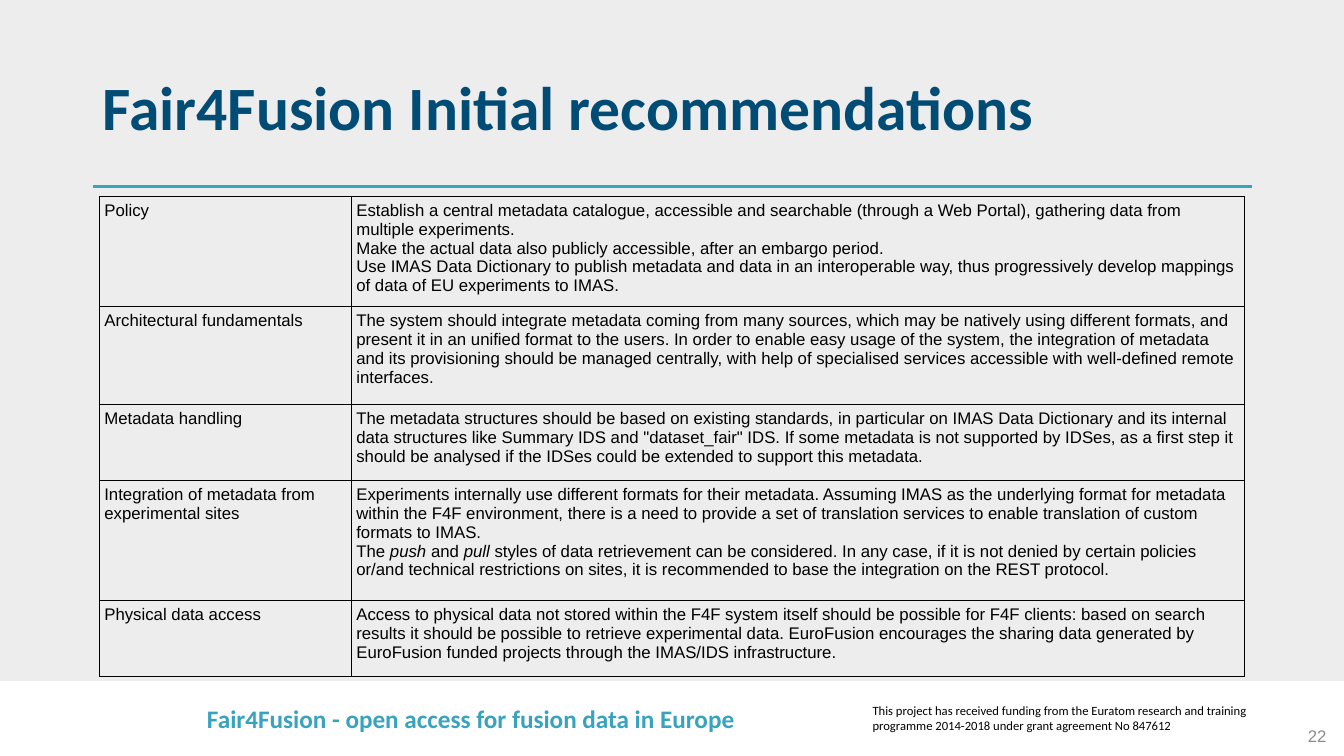
import pptx
import pptx.dml.color
import pptx.enum.shapes
import pptx.enum.text
import pptx.oxml.ns
import pptx.util
from lxml import etree
from pptx.util import Cm, Pt

HUES = {"back": "EEEDED", "white": "FFFFFF", "black": "000000",
        "teal": "37A3BF", "navy": "014C74", "gray": "8C8C8C"}
ALIGN = pptx.enum.text.PP_ALIGN
ANCHOR = pptx.enum.text.MSO_ANCHOR
qn = pptx.oxml.ns.qn


def hue(name):
    return pptx.dml.color.RGBColor.from_string(HUES[name])


def style(para, size, face, color, bold=False):
    for run in para.runs:
        run.font.size = Pt(size)
        run.font.name = face
        run.font.bold = bold
        run.font.color.rgb = hue(color)


deck = pptx.Presentation()
deck.slide_width, deck.slide_height = Cm(33.87), Cm(19.05)
slide = deck.slides.add_slide(deck.slide_layouts[6])
slide.background.fill.solid()
slide.background.fill.fore_color.rgb = hue("back")

# Footer band and title rule
band = slide.shapes.add_shape(pptx.enum.shapes.MSO_SHAPE.RECTANGLE,
                              0, Cm(17.17), Cm(33.87), Cm(1.88))
band.shadow.inherit = False
band.fill.solid()
band.fill.fore_color.rgb = hue("white")
band.line.color.rgb = hue("white")
band.line.width = Pt(1)

rule = slide.shapes.add_connector(pptx.enum.shapes.MSO_CONNECTOR.STRAIGHT,
                                  Cm(2.34), Cm(4.7), Cm(31.55), Cm(4.7))
rule.line.color.rgb = hue("teal")
rule.line.width = Pt(2.5)
etree.SubElement(rule._element.spPr, qn("a:effectLst"))

# Text, place, alignment, anchor, then size, font, colour, bold
labels = [
    ("This project has received funding from the Euratom research and training "
     "programme 2014-2018 under grant agreement No 847612",
     (21.74, 17.58, 10.36, 1.02), ALIGN.LEFT, ANCHOR.TOP,
     (9, "Calibri", "black")),
    ("Fair4Fusion - open access for fusion data in Europe",
     (4.39, 17.6, 14.96, 1.02), ALIGN.CENTER, ANCHOR.TOP,
     (18, "Calibri", "teal", True)),
    ("Fair4Fusion Initial recommendations",
     (2.34, 0.94, 29.21, 3.68), ALIGN.LEFT, ANCHOR.MIDDLE,
     (44, "Calibri", "navy", True)),
    ("22", (26.06, 18.03, 7.62, 1.02), ALIGN.RIGHT, ANCHOR.MIDDLE,
     (12, "Arial", "gray")),
]
for text, place, align, anchor, look in labels:
    frame = slide.shapes.add_textbox(*map(Cm, place)).text_frame
    frame.word_wrap = True
    frame.vertical_anchor = anchor
    frame.text = text
    para = frame.paragraphs[0]
    para.alignment = align
    if look[0] == 44:
        para.line_spacing = 0.9
    style(para, *look)

# Recommendations: height, topic, advice (asterisks enclose italics)
rows = [
    (2.75, "Policy", [
        "Establish a central metadata catalogue, accessible and searchable "
        "(through a Web Portal), gathering data from multiple experiments.",
        "Make the actual data also publicly accessible, after an embargo period.",
        "Use IMAS Data Dictionary to publish metadata and data in an interoperable "
        "way, thus progressively develop mappings of data of EU experiments to IMAS."]),
    (2.47, "Architectural fundamentals", [
        "The system should integrate metadata coming from many sources, which may "
        "be natively using different formats, and present it in an unified format "
        "to the users. In order to enable easy usage of the system, the integration "
        "of metadata and its provisioning should be managed centrally, with help of "
        "specialised services accessible with well-defined remote interfaces."]),
    (1.91, "Metadata handling", [
        "The metadata structures should be based on existing standards, in "
        "particular on IMAS Data Dictionary and its internal data structures like "
        "Summary IDS and \"dataset_fair\" IDS. If some metadata is not supported by "
        "IDSes, as a first step it should be analysed if the IDSes could be "
        "extended to support this metadata."]),
    (3.03, "Integration of metadata from experimental sites", [
        "Experiments internally use different formats for their metadata. Assuming "
        "IMAS as the underlying format for metadata within the F4F environment, "
        "there is a need to provide a set of translation services to enable "
        "translation of custom formats to IMAS.",
        "The *push* and *pull* styles of data retrievement can be considered. In any "
        "case, if it is not denied by certain policies or/and technical "
        "restrictions on sites, it is recommended to base the integration on the "
        "REST protocol."]),
    (1.91, "Physical data access", [
        "Access to physical data not stored within the F4F system itself should be "
        "possible for F4F clients: based on search results it should be possible to "
        "retrieve experimental data. EuroFusion encourages the sharing data "
        "generated by EuroFusion funded projects through the IMAS/IDS "
        "infrastructure."]),
]
table = slide.shapes.add_table(len(rows), 2, Cm(2.51), Cm(4.95), Cm(28.85),
                               Cm(sum(row[0] for row in rows))).table
table.first_row = table.horz_banding = False
table.columns[0].width, table.columns[1].width = Cm(6.35), Cm(22.5)

for r, (height, topic, advice) in enumerate(rows):
    table.rows[r].height = Cm(height)
    for c, lines in enumerate(([topic], advice)):
        cell = table.cell(r, c)
        cell.margin_left = cell.margin_right = Cm(0.12)
        cell.margin_top = cell.margin_bottom = Cm(0.12)
        cell.text_frame.text = "\n".join(lines)
        for para in cell.text_frame.paragraphs:
            parts = para.text.split("*")
            para.runs[0].text = parts[0]
            for n, part in enumerate(parts[1:], 1):
                run = para.add_run()
                run.text = part
                run.font.italic = n % 2 == 1
            style(para, 12, "Arial", "black")
        props = cell._tc.get_or_add_tcPr()
        for side in ("lnL", "lnR", "lnT", "lnB"):
            edge = etree.SubElement(props, qn("a:" + side), w=str(Pt(1)))
            fill = etree.SubElement(edge, qn("a:solidFill"))
            etree.SubElement(fill, qn("a:srgbClr"), val=HUES["black"])
        cell.fill.background()

deck.save("out.pptx")
